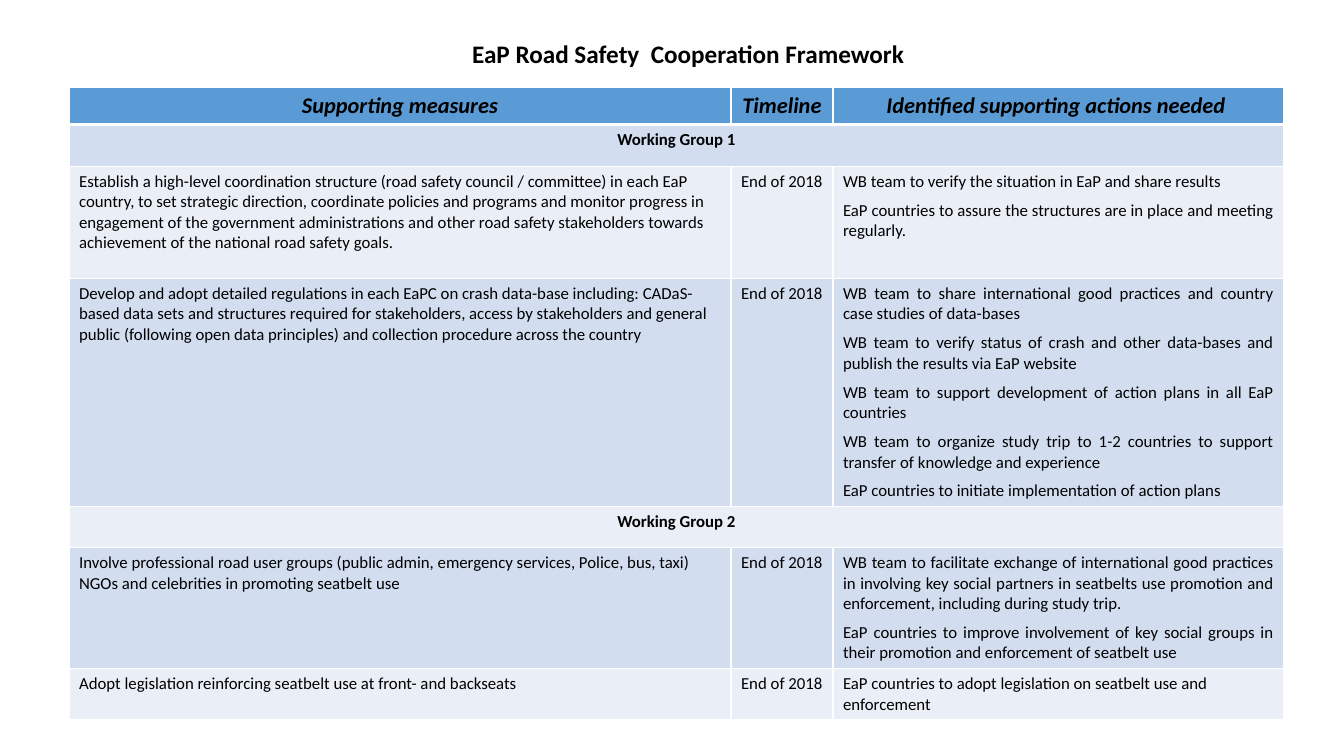
from lxml import etree
from pptx import Presentation
from pptx.dml.color import RGBColor
from pptx.enum.text import MSO_ANCHOR, PP_ALIGN
from pptx.oxml.ns import qn
from pptx.util import Pt

LEFT, CENTER, JUSTIFY = PP_ALIGN.LEFT, PP_ALIGN.CENTER, PP_ALIGN.JUSTIFY
TOP = MSO_ANCHOR.TOP

# Content
TITLE = "EaP Road Safety  Cooperation Framework"
HEADINGS = ["Supporting measures", "Timeline", "Identified supporting actions needed "]
DEADLINE = "End of 2018"
# A plain string is a working group; a tuple is (measure, actions, alignment of the actions)
ROWS = [
    "Working Group 1",
    ("Establish a high-level coordination structure (road safety council / committee) in each EaP "
     "country, to set strategic direction, coordinate policies and programs and monitor progress in "
     "engagement of the government administrations and other road safety stakeholders towards "
     "achievement of the national road safety goals.",
     ["WB team to verify the situation in EaP and share results",
      "EaP countries to assure the structures are in place and meeting regularly."], JUSTIFY),
    ("Develop and adopt detailed regulations in each EaPC on crash data-base including: CADaS-based "
     "data sets and structures required for stakeholders, access by stakeholders and general public "
     "(following open data principles) and collection procedure across the country",
     ["WB team to share international good practices and country case studies of data-bases ",
      "WB team to verify status of crash and other data-bases and publish the results via EaP website",
      "WB team to support development of action plans in all EaP countries",
      "WB team to organize study trip to 1-2 countries to support transfer of knowledge and experience ",
      "EaP countries to initiate implementation of action plans "], JUSTIFY),
    "Working Group 2",
    ("Involve professional road user groups (public admin, emergency services, Police, bus, taxi) "
     "NGOs and celebrities in promoting seatbelt use",
     ["WB team to facilitate exchange of international good practices in involving key social partners "
      "in seatbelts use promotion and enforcement, including during study trip.",
      "EaP countries to improve involvement of key social groups in their promotion and enforcement "
      "of seatbelt use"], JUSTIFY),
    ("Adopt legislation reinforcing seatbelt use at front- and backseats",
     ["EaP countries to adopt legislation on seatbelt use and enforcement"], LEFT),
]

# Layout in px
PX = 914400 / 100.8
SLIDE = (1344, 756)
TITLE_BOX = (462, 33, 457, 40)
TABLE_LEFT, TABLE_TOP = 69, 87
COLUMN_WIDTHS = [662, 102, 451]
ROW_HEIGHTS = [37, 42, 112, 228, 41, 121, 51]

# Style
FONT = "Calibri"
BLACK = RGBColor(0x00, 0x00, 0x00)
WHITE = RGBColor(0xFF, 0xFF, 0xFF)
HEADER_BLUE = RGBColor(0x5B, 0x9B, 0xD5)
BANDS = [RGBColor(0xEA, 0xEF, 0xF7), RGBColor(0xD2, 0xDE, 0xEF)]


def px(length):
    return round(length * PX)


def add_text(frame, paragraphs, size, align=LEFT, bold=False, italic=False, after=0):
    for i, text in enumerate(paragraphs):
        paragraph = frame.add_paragraph() if i else frame.paragraphs[0]
        paragraph.alignment = align
        paragraph.space_after = Pt(after)
        run = paragraph.add_run()
        run.text = text
        run.font.name = FONT
        run.font.size = Pt(size)
        run.font.bold = bold
        run.font.italic = italic
        run.font.color.rgb = BLACK


def style_cell(cell, row):
    """White borders, thick under the header, and the fill of the row's band."""
    widths = {"lnL": 1, "lnR": 1, "lnT": 3 if row == 1 else 1, "lnB": 1 if row else 3}
    properties = cell._tc.get_or_add_tcPr()
    for side, width in widths.items():
        line = etree.SubElement(properties, qn("a:" + side), w=str(Pt(width)))
        fill = etree.SubElement(line, qn("a:solidFill"))
        etree.SubElement(fill, qn("a:srgbClr"), val=str(WHITE))
    cell.fill.solid()
    cell.fill.fore_color.rgb = BANDS[row % 2] if row else HEADER_BLUE


presentation = Presentation()
presentation.slide_width, presentation.slide_height = map(px, SLIDE)
slide = presentation.slides.add_slide(presentation.slide_layouts[5])

# Title
title = slide.shapes.title
title.left, title.top, title.width, title.height = map(px, TITLE_BOX)
title.text_frame.word_wrap = True
title.text_frame.vertical_anchor = TOP
add_text(title.text_frame, [TITLE], 18, bold=True)

# Table grid
measures = slide.shapes.add_table(
    len(ROW_HEIGHTS), len(COLUMN_WIDTHS), px(TABLE_LEFT), px(TABLE_TOP),
    px(sum(COLUMN_WIDTHS)), px(sum(ROW_HEIGHTS))).table
for column, width in zip(measures.columns, COLUMN_WIDTHS):
    column.width = px(width)
for r, height in enumerate(ROW_HEIGHTS):
    measures.rows[r].height = px(height)
    for cell in measures.rows[r].cells:
        style_cell(cell, r)

# Header row
for c, heading in enumerate(HEADINGS):
    add_text(measures.cell(0, c).text_frame, [heading], 16, CENTER, bold=True, italic=True)

# Working groups and their measures
for r, content in enumerate(ROWS, 1):
    first, timeline, last = (measures.cell(r, c) for c in range(3))
    if isinstance(content, str):
        first.merge(last)
        add_text(first.text_frame, [content], 12, CENTER, bold=True)
    else:
        measure, actions, align = content
        add_text(first.text_frame, [measure], 12)
        add_text(timeline.text_frame, [DEADLINE], 12)
        add_text(last.text_frame, actions, 12, align, after=6 if align == JUSTIFY else 0)

presentation.save("out.pptx")
